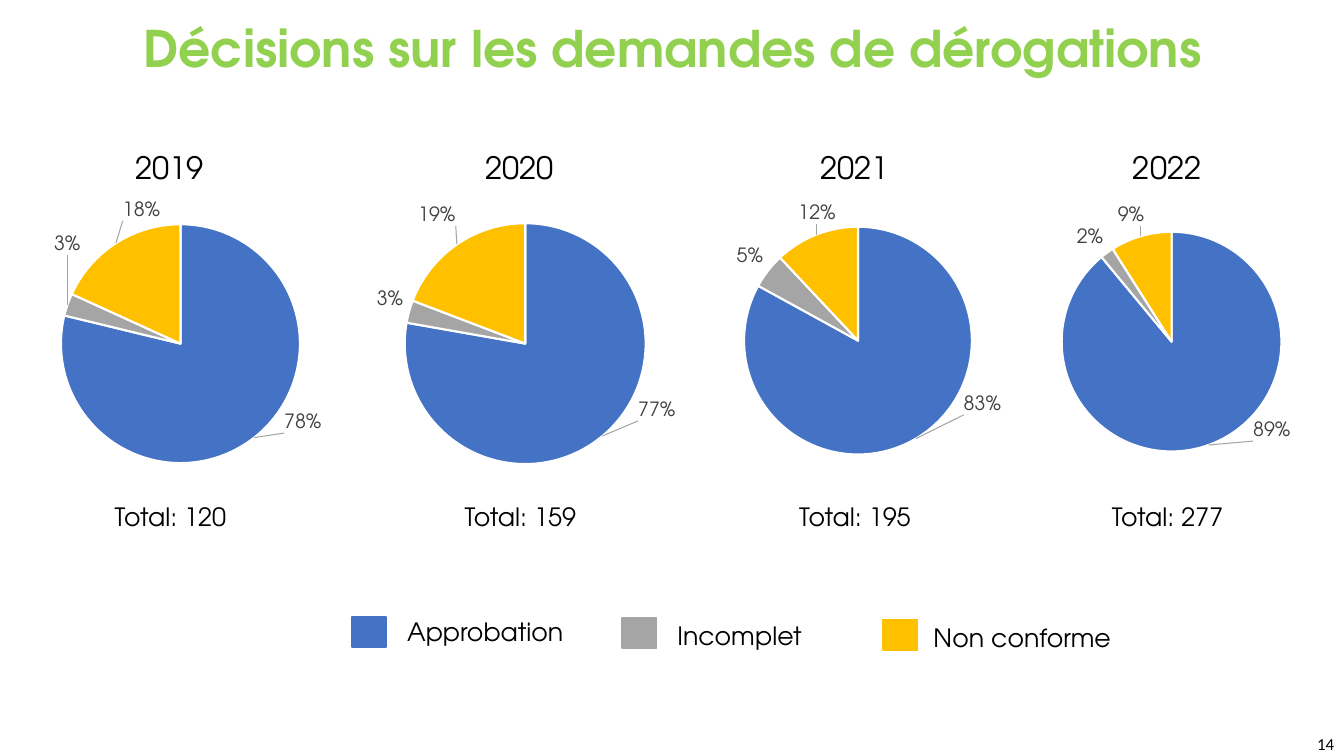
from math import cos, pi, sin
from lxml import etree
from pptx import Presentation
from pptx.chart.data import CategoryChartData
from pptx.dml.color import RGBColor
from pptx.enum.chart import XL_CHART_TYPE, XL_LABEL_POSITION
from pptx.enum.shapes import MSO_SHAPE
from pptx.enum.text import MSO_ANCHOR, PP_ALIGN
from pptx.oxml import parse_xml
from pptx.util import Inches, Pt

PIE = XL_CHART_TYPE.PIE
OUTSIDE = XL_LABEL_POSITION.OUTSIDE_END
RECT = MSO_SHAPE.RECTANGLE
TOP, MIDDLE = MSO_ANCHOR.TOP, MSO_ANCHOR.MIDDLE
LEFT, CENTER, RIGHT = PP_ALIGN.LEFT, PP_ALIGN.CENTER, PP_ALIGN.RIGHT
FONT = "TeX Gyre Adventor"
COLORS = {
    "title": "92D050", "text": "000000", "label": "404040", "white": "FFFFFF",
    "approved": "4472C4", "other": "ED7D31", "incomplete": "A5A5A5", "rejected": "FFC000",
}
SLICES = ["approved", "other", "incomplete", "rejected"]
C_NS = ('xmlns:c="http://schemas.openxmlformats.org/drawingml/2006/chart" '
        'xmlns:a="http://schemas.openxmlformats.org/drawingml/2006/main"')
CHART_TOP, CHART_W, CHART_H = 1.94, 3.1, 2.9

prs = Presentation()
prs.slide_width, prs.slide_height = Inches(13.33), Inches(7.5)
s = prs.slides.add_slide(prs.slide_layouts[6])


def rgb(name):
    return RGBColor.from_string(COLORS[name])


def add_text(text, x, y, w, h, size=18, font=FONT, color="text", bold=False,
             align=CENTER, anchor=TOP, wrap=False, spacing=1.0):
    tf = s.shapes.add_textbox(Inches(x), Inches(y), Inches(w), Inches(h)).text_frame
    tf.word_wrap = wrap
    tf.vertical_anchor = anchor
    p = tf.paragraphs[0]
    p.alignment = align
    p.line_spacing = spacing
    r = p.add_run()
    r.text = text
    r.font.name, r.font.size, r.font.bold = font, Pt(size), bold
    r.font.color.rgb = rgb(color)


add_text("Décisions sur les demandes de dérogations", 0.92, 0.04, 11.5, 0.93, size=36,
         color="title", bold=True, anchor=MIDDLE, wrap=True, spacing=0.9)
add_text("14", 10.33, 7.26, 3, 0.24, size=12, font="Calibri", align=RIGHT,
         anchor=MIDDLE, wrap=True)

# year, total, heading centre, pie centre, diameter, values, moved label centres
pies = [
    ("2019", 120, 1.69, 1.79, 3.41, 2.37, (0.78, 0, 0.03, 0.18),
     {0: (3.0, 4.22), 2: (0.67, 2.42), 3: (1.41, 2.08)}),
    ("2020", 159, 5.16, 5.21, 3.41, 2.39, (0.77, 0, 0.03, 0.19),
     {0: (6.51, 4.1), 2: None, 3: (4.34, 2.13)}),
    ("2021", 195, 8.48, 8.51, 3.38, 2.26, (0.83, 0, 0.05, 0.12),
     {0: (9.74, 4.04), 2: None, 3: (8.11, 2.11)}),
    ("2022", 277, 11.58, 11.62, 3.39, 2.18, (0.89, 0, 0.02, 0.09),
     {0: (12.61, 4.3), 2: None, 3: (11.22, 2.13)}),
]
for year, total, mid, cx, cy, size, values, labels in pies:
    add_text(year, mid - 0.45, 1.43, 0.89, 0.47, size=22)
    add_text(f"Total: {total}", mid - 0.67, 4.92, 1.34, 0.4)

    data = CategoryChartData(number_format="0%")
    data.categories = ["1", "2", "3", "4"]
    data.add_series("Series 1", values)
    chart = s.shapes.add_chart(PIE, Inches(cx - CHART_W / 2), Inches(CHART_TOP),
                               Inches(CHART_W), Inches(CHART_H), data).chart
    chart.has_title = chart.has_legend = False
    chart.font.name, chart.font.size = "Calibri", Pt(10)
    chart.font.color.rgb = rgb("text")
    plot = chart.plots[0]
    plot.vary_by_categories = True

    plot_area = chart._chartSpace.chart.plotArea
    for old in plot_area.xpath("c:layout"):
        plot_area.remove(old)
    plot_area.insert(0, parse_xml(
        f'<c:layout {C_NS}><c:manualLayout><c:layoutTarget val="inner"/>'
        '<c:xMode val="edge"/><c:yMode val="edge"/>'
        f'<c:x val="{0.5 - size / 2 / CHART_W:.4f}"/>'
        f'<c:y val="{(cy - size / 2 - CHART_TOP) / CHART_H:.4f}"/>'
        f'<c:w val="{size / CHART_W:.4f}"/><c:h val="{size / CHART_H:.4f}"/>'
        '</c:manualLayout></c:layout>'))

    series = plot.series[0]
    for i, name in enumerate(SLICES):
        fmt = series.points[i].format
        fmt.fill.solid()
        fmt.fill.fore_color.rgb = rgb(name)
        fmt.line.color.rgb = rgb("white")
        fmt.line.width = Pt(1.5)

    dls = series.data_labels
    dls.show_value = False
    dls.number_format, dls.number_format_is_linked = "0%", False
    dls.position = OUTSIDE
    dls._element.append(parse_xml(
        f'<c:leaderLines {C_NS}><c:spPr><a:ln w="9525"><a:solidFill>'
        f'<a:srgbClr val="{COLORS["incomplete"]}"/></a:solidFill></a:ln></c:spPr></c:leaderLines>'))
    for i, target in labels.items():
        dl = series.points[i].data_label
        dl.position = OUTSIDE
        dl.font.name, dl.font.size = FONT, Pt(14)
        dl.font.color.rgb = rgb("label")
        if target:
            angle = 2 * pi * (sum(values[:i]) + values[i] / 2) / sum(values)
            dx, dy = sin(angle), -cos(angle)
            reach = size / 2 + 0.06
            half_w = 0.18 if values[i] >= 0.1 else 0.13
            base_x = cx + reach * dx + (half_w if dx > 0 else -half_w)
            base_y = cy + reach * dy + (0.11 if dy > 0 else -0.11)
            element = dls._element.xpath(f'c:dLbl[c:idx/@val="{i}"]')[0]
            layout = etree.fromstring(
                f'<c:layout {C_NS}><c:manualLayout>'
                f'<c:x val="{(target[0] - base_x) / CHART_W:.4f}"/>'
                f'<c:y val="{(target[1] - base_y) / CHART_H:.4f}"/>'
                '</c:manualLayout></c:layout>')
            element.insert(1, layout)

legend = [
    ("Approbation", "approved", 3.49, 6.12, 3.94, 6.07, 1.77),
    ("Incomplet", "incomplete", 6.17, 6.13, 6.62, 6.1, 1.45),
    ("Non conforme", "rejected", 8.76, 6.15, 9.16, 6.12, 1.98),
]
for text, color, x, y, text_x, text_y, w in legend:
    sp = s.shapes.add_shape(RECT, Inches(x), Inches(y), Inches(0.34), Inches(0.3))
    sp.shadow.inherit = False
    sp.fill.solid()
    sp.fill.fore_color.rgb = rgb(color)
    sp.line.color.rgb = rgb(color)
    sp.line.width = Pt(1)
    add_text(text, text_x, text_y, w, 0.4, align=LEFT)

prs.save("out.pptx")
